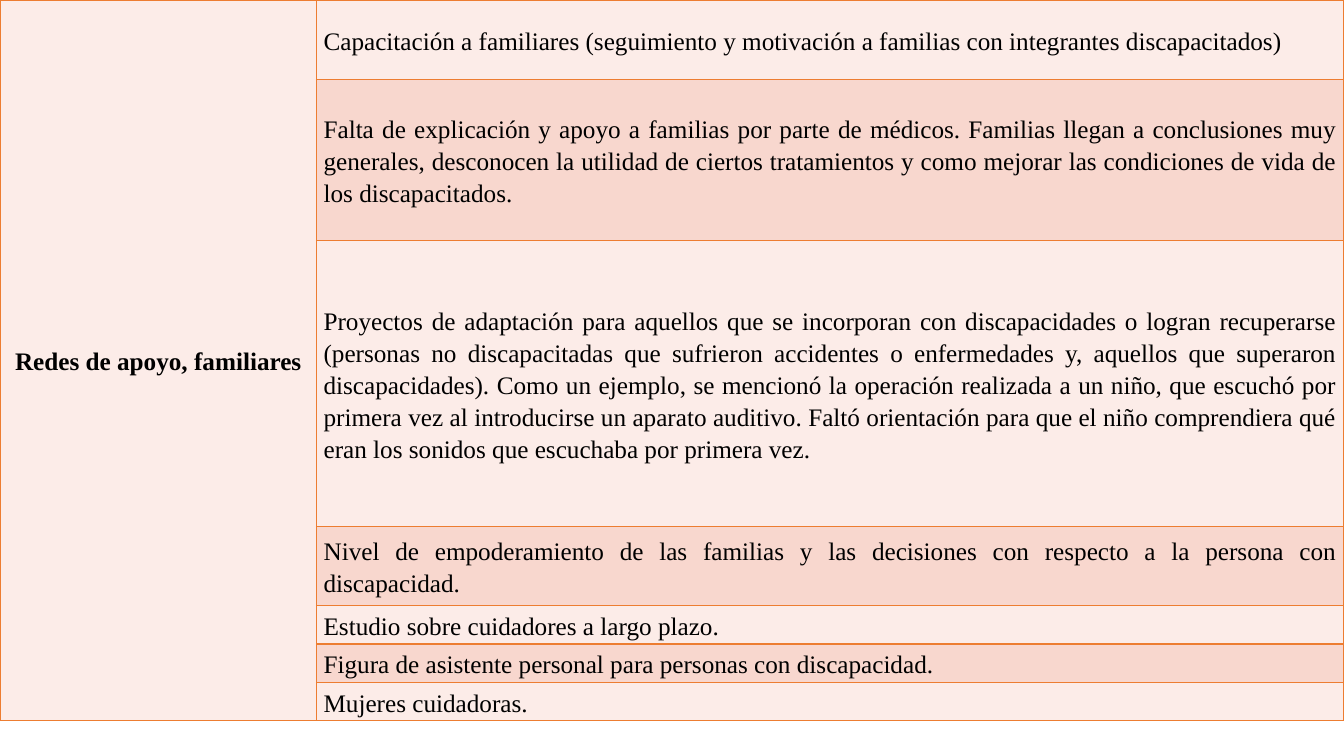
from lxml import etree
from pptx import Presentation
from pptx.dml.color import RGBColor
from pptx.enum.text import MSO_ANCHOR, PP_ALIGN
from pptx.oxml.ns import qn
from pptx.util import Inches, Pt

CENTER, JUSTIFY = PP_ALIGN.CENTER, PP_ALIGN.JUSTIFY
MIDDLE = MSO_ANCHOR.MIDDLE

THEME = {
    "font": "Times New Roman",
    "size": Pt(18),
    "text": RGBColor.from_string("000000"),
    "bands": [RGBColor.from_string("FCECE8"), RGBColor.from_string("F8D7CE")],
    "border": "ED7D31",
    "border_width": Pt(1),
}
CELL_FORMAT = {
    "margin_left": Inches(0.07),
    "margin_right": Inches(0.07),
    "margin_top": 0,
    "margin_bottom": 0,
    "vertical_anchor": MIDDLE,
}
PARA_FORMAT = {"line_spacing": 1.15, "space_after": Pt(10)}
FONT_FORMAT = {"name": THEME["font"], "size": THEME["size"]}

CATEGORY = "Redes de apoyo, familiares"
COLUMN_WIDTHS = [3.14, 10.19]
# Row height in inches and topic
TOPICS = [
    (0.79, "Capacitación a familiares (seguimiento y motivación a familias con "
           "integrantes discapacitados)"),
    (1.6, "Falta de explicación y apoyo a familias por parte de médicos. Familias "
          "llegan a conclusiones muy generales, desconocen la utilidad de ciertos "
          "tratamientos y como mejorar las condiciones de vida de los discapacitados."),
    (2.83, "Proyectos de adaptación para aquellos que se incorporan con discapacidades "
           "o logran recuperarse (personas no discapacitadas que sufrieron accidentes o "
           "enfermedades y, aquellos que superaron discapacidades). Como un ejemplo, se "
           "mencionó la operación realizada a un niño, que escuchó por primera vez al "
           "introducirse un aparato auditivo. Faltó orientación para que el niño "
           "comprendiera qué eran los sonidos que escuchaba por primera vez."),
    (0.79, "Nivel de empoderamiento de las familias y las decisiones con respecto a la "
           "persona con discapacidad."),
    (0.38, "Estudio sobre cuidadores a largo plazo."),
    (0.38, "Figura de asistente personal para personas con discapacidad."),
    (0.38, "Mujeres cuidadoras."),
]


def add_borders(cell):
    properties = cell._tc.get_or_add_tcPr()
    for position, side in enumerate(("a:lnL", "a:lnR", "a:lnT", "a:lnB")):
        line = etree.Element(qn(side), w=str(THEME["border_width"]))
        fill = etree.SubElement(line, qn("a:solidFill"))
        etree.SubElement(fill, qn("a:srgbClr"), val=THEME["border"])
        properties.insert(position, line)


def write_cell(cell, text, alignment, bold):
    para = cell.text_frame.paragraphs[0]
    para.alignment = alignment
    span = para.add_run()
    span.text = text
    span.font.bold = bold
    span.font.color.rgb = THEME["text"]
    for target, values in ((para, PARA_FORMAT), (span.font, FONT_FORMAT)):
        for name, value in values.items():
            setattr(target, name, value)


# Page
deck = Presentation()
deck.slide_width, deck.slide_height = Inches(13.33), Inches(7.5)
page = deck.slides.add_slide(deck.slide_layouts[6])

# Table grid
heights = [height for height, topic in TOPICS]
frame = page.shapes.add_table(len(TOPICS), len(COLUMN_WIDTHS), 0, 0,
                              deck.slide_width, Inches(sum(heights)))
table = frame.table
table.first_row = False
for column, width in zip(table.columns, COLUMN_WIDTHS):
    column.width = Inches(width)
for row, height in zip(table.rows, heights):
    row.height = Inches(height)

# Cell fills, margins and borders
for index, row in enumerate(table.rows):
    for cell in row.cells:
        cell.fill.solid()
        cell.fill.fore_color.rgb = THEME["bands"][index % 2]
        for name, value in CELL_FORMAT.items():
            setattr(cell, name, value)
        add_borders(cell)

# Category spanning all rows
category_cell = table.cell(0, 0)
category_cell.merge(table.cell(len(TOPICS) - 1, 0))
write_cell(category_cell, CATEGORY, CENTER, True)

# Topics
for index, (height, topic) in enumerate(TOPICS):
    write_cell(table.cell(index, 1), topic, JUSTIFY, False)

deck.save("out.pptx")
